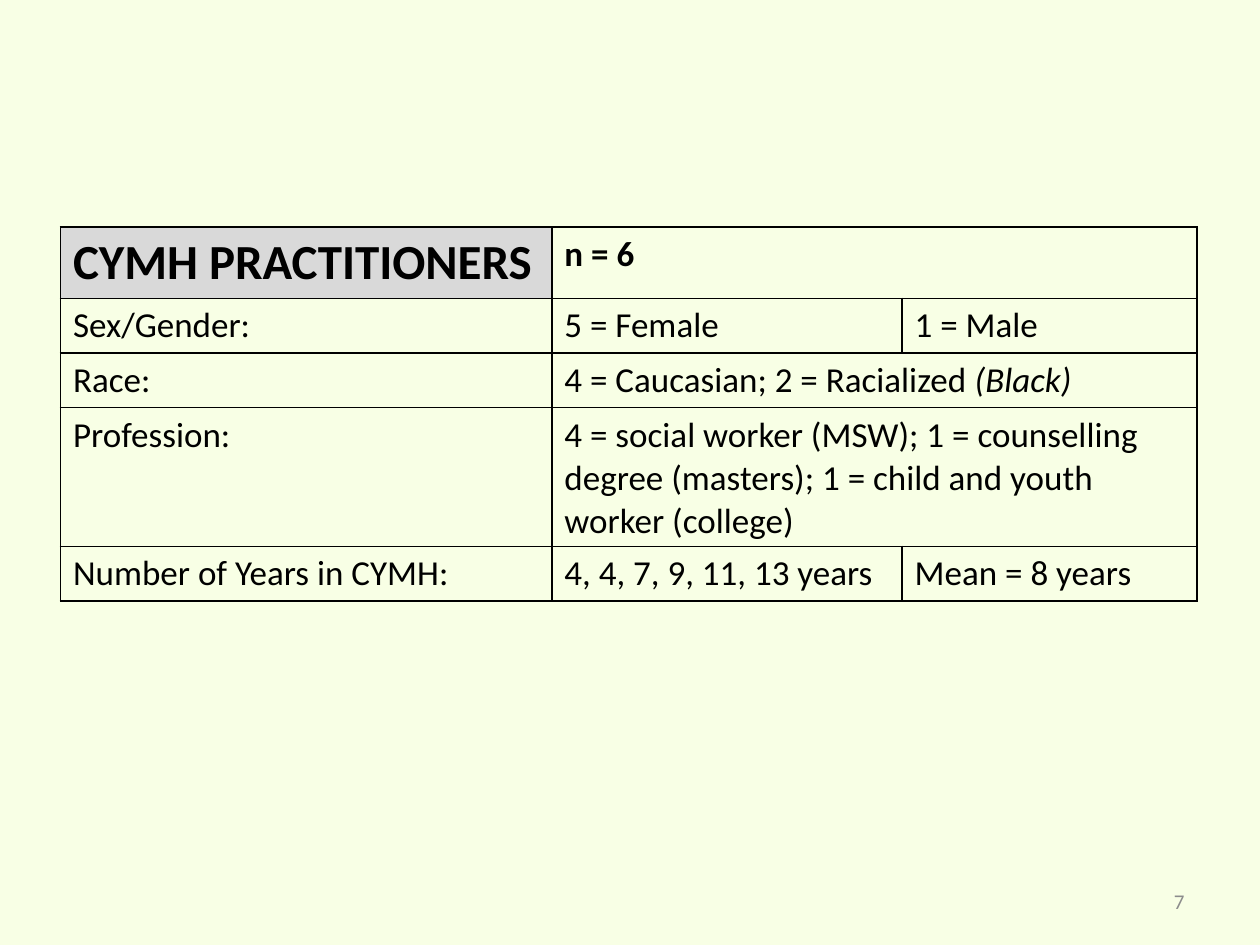
"""Build the practitioner profile slide with its table and slide number."""
import pptx
import pptx.util
import pptx.dml.color
import pptx.enum.text
import pptx.oxml
import pptx.oxml.ns
from pptx.util import Inches

BLACK = pptx.dml.color.RGBColor(0x00, 0x00, 0x00)
GRAY = pptx.dml.color.RGBColor(0x8C, 0x8C, 0x8C)
HEADER_FILL = pptx.dml.color.RGBColor(0xD9, 0xD9, 0xD9)
BACKGROUND = pptx.dml.color.RGBColor(0xF8, 0xFF, 0xE5)

HEADING = {"size": pptx.util.Pt(28), "bold": True}
COUNT = {"bold": True}
ITALIC = {"italic": True}

COLUMN_WIDTHS = (3.9, 2.78, 2.34)
ROW_HEIGHT = 0.41
ROWS = [
    [[("CYMH PRACTITIONERS", HEADING)], [("n = 6", COUNT)]],
    [[("Sex/Gender:", {})], [("5 = Female", {})], [("1 = Male", {})]],
    [[("Race:", {})], [("4 = Caucasian; 2 = Racialized ", {}), ("(Black)", ITALIC)]],
    [[("Profession:", {})],
     [("4 = social worker (MSW); 1 = counselling degree (masters); "
       "1 = child and youth worker (college)", {})]],
    [[("Number of Years in CYMH:", {})], [("4, 4, 7, 9, 11, 13 years", {})],
     [("Mean = 8 years", {})]],
]


class SlideBuilder:
    font_name = "Calibri"
    text_size = pptx.util.Pt(20)
    border_width = pptx.util.Pt(1)

    def __init__(self, slide):
        self.slide = slide
        fill = slide.background.fill
        fill.solid()
        fill.fore_color.rgb = BACKGROUND

    def add_run(self, paragraph, text, color=BLACK, **changes):
        run = paragraph.add_run()
        run.text = text
        values = {"name": self.font_name, "size": self.text_size,
                  "bold": False, "italic": False, **changes}
        for name, value in values.items():
            setattr(run.font, name, value)
        run.font.color.rgb = color

    def add_borders(self, cell):
        properties = cell._tc.get_or_add_tcPr()
        for side in ("lnL", "lnR", "lnT", "lnB"):
            properties.append(pptx.oxml.parse_xml(
                f'<a:{side} {pptx.oxml.ns.nsdecls("a")} w="{self.border_width}">'
                f'<a:solidFill><a:srgbClr val="{BLACK}"/></a:solidFill></a:{side}>'))

    def add_table(self, left, top, height, rows):
        frame = self.slide.shapes.add_table(
            len(rows), len(COLUMN_WIDTHS), Inches(left), Inches(top),
            Inches(sum(COLUMN_WIDTHS)), Inches(height))
        table = frame.table
        table.first_row = table.horz_banding = False
        for column, width in zip(table.columns, COLUMN_WIDTHS):
            column.width = Inches(width)
        for row in table.rows:
            row.height = Inches(ROW_HEIGHT)
        frame.height = Inches(height)
        for cell in table.iter_cells():
            self.add_borders(cell)
            cell.fill.background()
        for row_index, contents in enumerate(rows):
            if len(contents) < len(COLUMN_WIDTHS):
                table.cell(row_index, 1).merge(table.cell(row_index, 2))
            for column_index, runs in enumerate(contents):
                paragraph = table.cell(row_index, column_index).text_frame.paragraphs[0]
                for text, changes in runs:
                    self.add_run(paragraph, text, **changes)
        header = table.cell(0, 0)
        header.fill.solid()
        header.fill.fore_color.rgb = HEADER_FILL

    def add_slide_number(self, left, top, width, height, text):
        box = self.slide.shapes.add_textbox(
            Inches(left), Inches(top), Inches(width), Inches(height))
        box.text_frame.word_wrap = True
        box.text_frame.vertical_anchor = pptx.enum.text.MSO_ANCHOR.MIDDLE
        paragraph = box.text_frame.paragraphs[0]
        paragraph.alignment = pptx.enum.text.PP_ALIGN.RIGHT
        self.add_run(paragraph, text, GRAY, size=pptx.util.Pt(12))


def main():
    presentation = pptx.Presentation()
    presentation.slide_width = Inches(10)
    presentation.slide_height = Inches(7.5)
    slide = presentation.slides.add_slide(presentation.slide_layouts[6])
    builder = SlideBuilder(slide)
    builder.add_slide_number(7.17, 6.95, 2.33, 0.4, "7")
    builder.add_table(0.48, 1.8, 2.97, ROWS)
    presentation.save("out.pptx")


if __name__ == "__main__":
    main()
